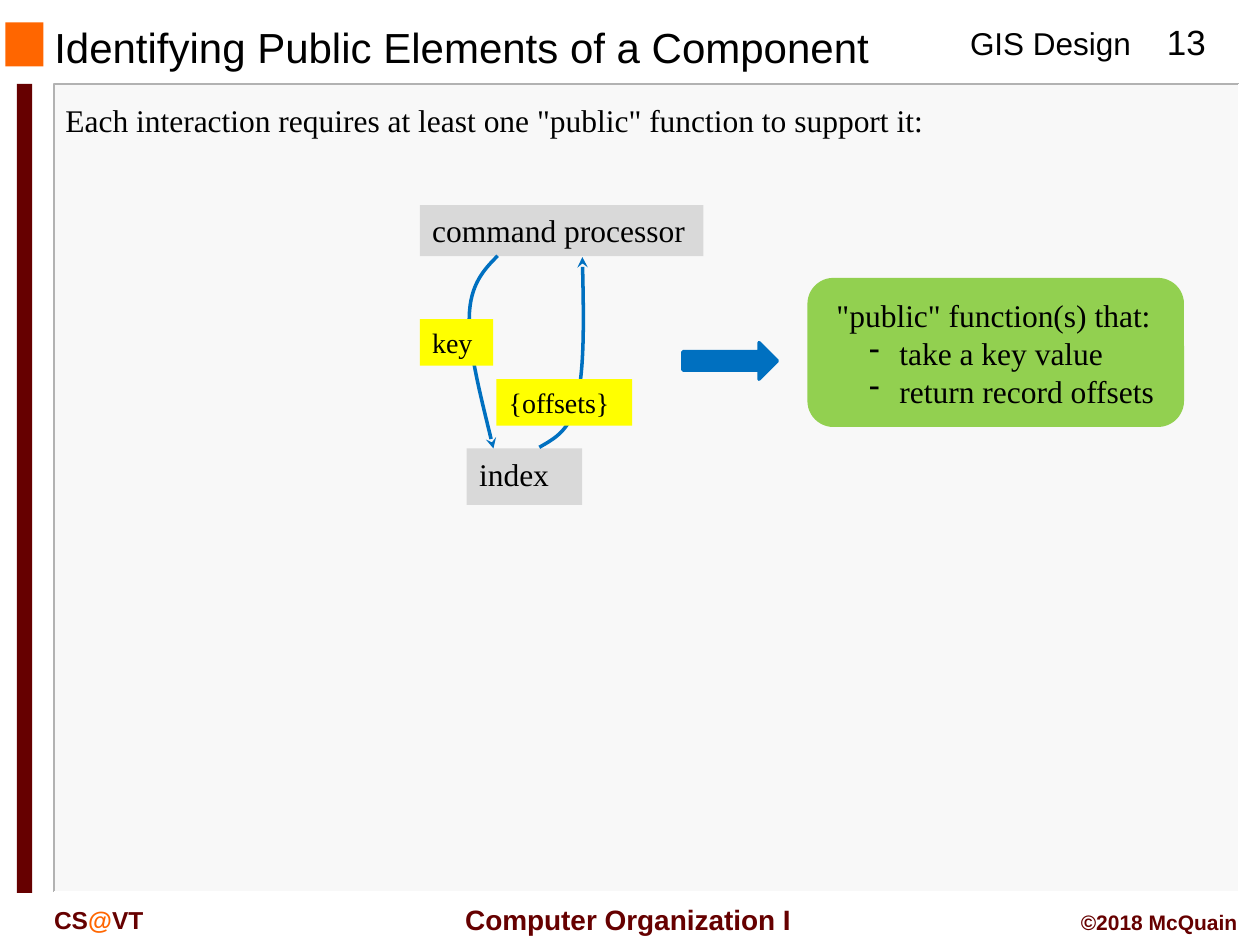
from lxml.etree import SubElement
from pptx import Presentation
from pptx.dml.color import RGBColor
from pptx.enum.shapes import MSO_SHAPE as Preset
from pptx.enum.text import MSO_ANCHOR as Anchor, PP_ALIGN as Align
from pptx.oxml.ns import qn
from pptx.util import Pt

THEME = {
    "sans": "Arial", "serif": "Times New Roman",
    "black": "000000", "white": "FFFFFF", "panel": "F8F8F8", "rule": "B2B2B2",
    "orange": "FF6600", "maroon": "660000", "grey": "D9D9D9",
    "yellow": "FFFF00", "green": "92D050", "blue": "0070C0",
    "title": 24, "number": 20, "body": 18, "label": 16, "footer": 14, "credit": 12,
}

# Content: boxes are (left, top, width, height) in points
TITLE = ("Identifying Public Elements of a Component", (23.8, 13, 514.8, 27.4))
BODY = ('Each interaction requires at least one "public" function to support it:',
        (30.2, 54, 671.8, 29.1))
PANEL = (31, 48.2, 676.8, 461.5)
MARKS = [("panel", PANEL), ("orange", (3, 12.8, 21.8, 25.2)),
         ("maroon", (9.6, 48, 8.8, 462.2))]

# (box, spans as (text, colour), size, bold, alignment)
FURNITURE = [
    ((547.2, 10.1, 107.3, 29.1), [("GIS Design", "black")], "body", False, Align.LEFT),
    ((653.8, 7.9, 48.2, 31.5), [("13", "black")], "number", False, Align.CENTER),
    ((23.8, 513.4, 108, 24.2), [("CS", "maroon"), ("@", "orange"), ("VT", "maroon")],
     "footer", True, Align.LEFT),
    ((252.7, 512, 212.4, 26.6), [("Computer Organization I", "maroon")],
     "label", True, Align.CENTER),
    ((504, 516.2, 210.2, 21.8), [("©2018 McQuain", "maroon")],
     "credit", True, Align.RIGHT),
]
MODULES = [("command processor", (239.9, 117.2, 162, 29.1)),
           ("index", (266.7, 256.3, 66, 32.2))]
MESSAGES = [("key", (239.9, 182.4, 42, 26.6)),
            ("{offsets}", (283.6, 216.7, 77.7, 26.6))]
# Each curve: a start point, then three points for every Bézier piece
CURVES = [
    [(284.4, 146.2), (276.5, 154.1), (268.6, 162.7), (268.2, 181),
     (267.8, 199.5), (275, 227.5), (282, 256.3)],
    [(308.2, 255.6), (316.8, 250.6), (326.2, 246.2), (330, 227.5),
     (334, 209.5), (333.6, 178.6), (332.8, 146.9)],
]
ARROW = (390.2, 195.8, 54, 20.9)
CARD = (462.4, 159.8, 213.2, 83.2)
CARD_TEXT = (470.9, 165.6, 198, 72.7)
CARD_HEAD = '"public" function(s) that:'
CARD_ITEMS = ["take a key value", "return record offsets"]


def color(name):
    return RGBColor.from_string(THEME[name])


def lengths(box):
    return [Pt(value) for value in box]


def set_font(font, size, face, name="black", bold=False):
    font.size, font.name, font.bold = Pt(THEME[size]), THEME[face], bold
    font.color.rgb = color(name)


def add_block(page, preset, box, fill, line=None):
    block = page.shapes.add_shape(preset, *lengths(box))
    block.shadow.inherit = False
    block.fill.solid()
    block.fill.fore_color.rgb = color(fill)
    if line:
        block.line.color.rgb, block.line.width = color(line), Pt(2)
    else:
        block.line.fill.background()
    return block


def add_label(page, text, box, fill, size):
    frame = add_block(page, Preset.RECTANGLE, box, fill).text_frame
    frame.word_wrap, frame.vertical_anchor = True, Anchor.TOP
    para = frame.paragraphs[0]
    para.text, para.alignment = text, Align.LEFT
    set_font(para.font, size, "serif")


def add_text_frame(page, box):
    frame = page.shapes.add_textbox(*lengths(box)).text_frame
    frame.word_wrap = True
    return frame


def add_outline(page, points, line, width):
    points = [tuple(lengths(point)) for point in points]
    builder = page.shapes.build_freeform(*points[0], scale=1.0)
    builder.add_line_segments(points[1:], close=False)
    outline = builder.convert_to_shape()
    outline.shadow.inherit = False
    outline.fill.background()
    outline.line.color.rgb, outline.line.width = color(line), Pt(width)
    return outline


def add_curve_arrow(page, points):
    curve = add_outline(page, points, "blue", 2)
    # Turn each three line segments into one Bézier piece
    track = curve.element.find(".//" + qn("a:path"))
    segments = track.findall(qn("a:lnTo"))
    for start in range(0, len(segments), 3):
        piece = SubElement(track, qn("a:cubicBezTo"))
        for segment in segments[start:start + 3]:
            piece.append(segment[0])
            track.remove(segment)
    SubElement(curve.line._get_or_add_ln(), qn("a:tailEnd"), type="stealth")


def fill_placeholder(shape, text, box, size, face, anchor):
    shape.left, shape.top, shape.width, shape.height = lengths(box)
    frame = shape.text_frame
    frame.word_wrap, frame.vertical_anchor = True, anchor
    para = frame.paragraphs[0]
    para.text, para.alignment, para.space_before = text, Align.LEFT, Pt(0)
    set_font(para.font, size, face)
    return para


def set_bullet(para, mark=None, left=0, hang=0):
    props = para._p.get_or_add_pPr()
    props.set("marL", str(Pt(left)))
    props.set("indent", str(Pt(-hang)))
    if mark:
        SubElement(props, qn("a:buChar"), char=mark)
    else:
        SubElement(props, qn("a:buNone"))


def main():
    deck = Presentation()
    deck.slide_width, deck.slide_height = Pt(720), Pt(540)
    page = deck.slides.add_slide(deck.slide_layouts[1])

    # Title and lead sentence
    heading, lead = page.placeholders
    fill_placeholder(heading, *TITLE, "title", "sans", Anchor.MIDDLE)
    set_bullet(fill_placeholder(lead, *BODY, "body", "serif", Anchor.TOP))

    # Panel, marks and edge rules, kept behind the placeholders
    backdrop = [add_block(page, Preset.RECTANGLE, box, fill) for fill, box in MARKS]
    left, top, width, height = PANEL
    right, bottom = left + width, top + height
    for corner, line in (((left, top), "rule"), ((right, bottom), "white")):
        backdrop.append(add_outline(
            page, [(right, top), corner, (left, bottom)], line, 1))
    for shape in backdrop:
        heading.element.addprevious(shape.element)

    # Header and footer
    for box, spans, size, bold, alignment in FURNITURE:
        para = add_text_frame(page, box).paragraphs[0]
        para.alignment = alignment
        for text, name in spans:
            span = para.add_run()
            span.text = text
            set_font(span.font, size, "sans", name, bold)

    # Interaction diagram
    for text, box in MODULES:
        add_label(page, text, box, "grey", "body")
    for points in CURVES:
        add_curve_arrow(page, points)
    for text, box in MESSAGES:
        add_label(page, text, box, "yellow", "label")

    # Resulting functions
    add_block(page, Preset.FLOWCHART_ALTERNATE_PROCESS, CARD, "green", "green")
    frame = add_text_frame(page, CARD_TEXT)
    for index, text in enumerate([CARD_HEAD] + CARD_ITEMS):
        para = frame.add_paragraph() if index else frame.paragraphs[0]
        para.text = text
        set_font(para.font, "body", "serif")
        if index:
            set_bullet(para, "-", 36, 17.3)
    add_block(page, Preset.RIGHT_ARROW, ARROW, "blue", "blue")

    deck.save("out.pptx")


if __name__ == "__main__":
    main()
